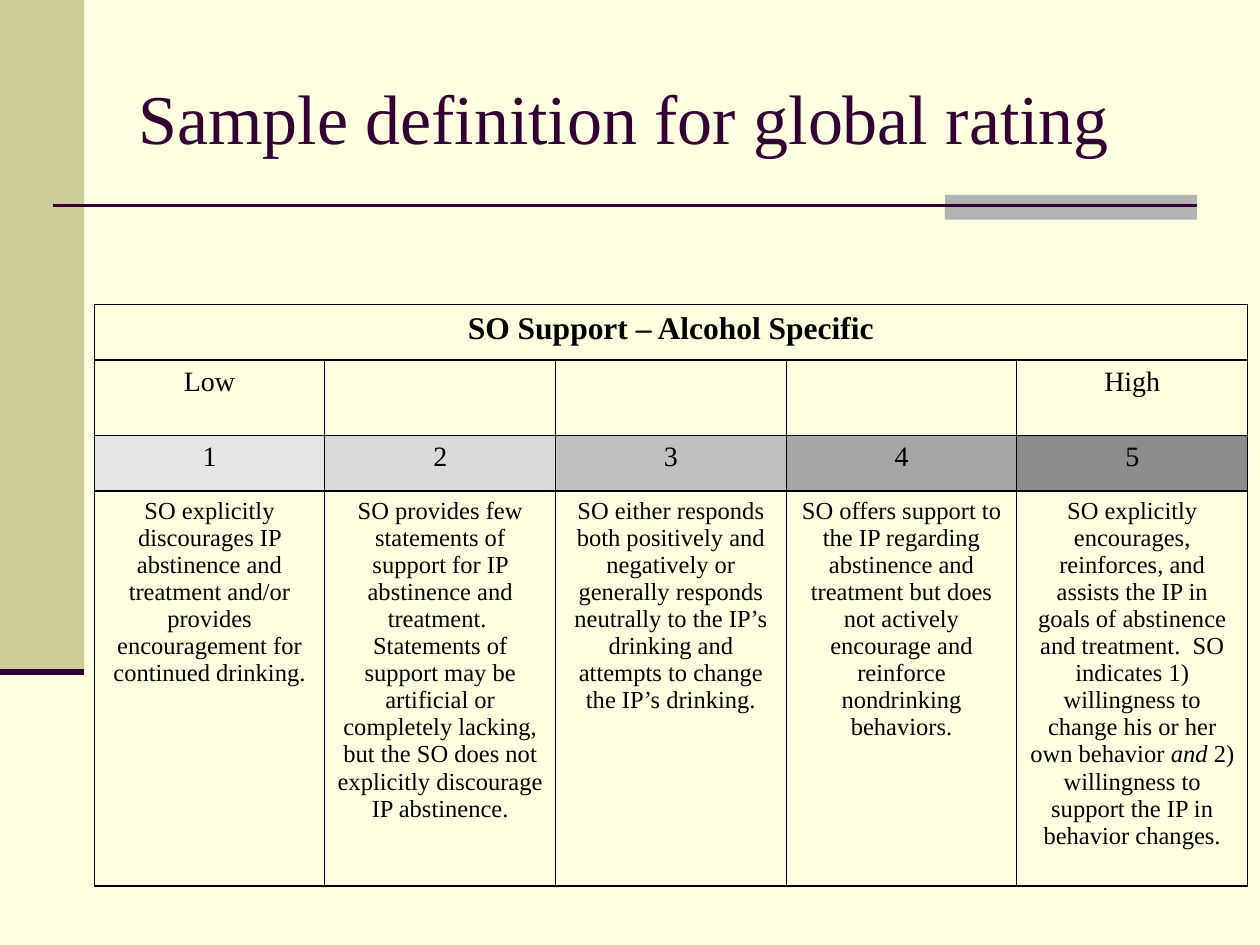
"""Build the slide defining a global rating scale for SO support."""
from dataclasses import dataclass

from lxml import etree
from pptx import Presentation
from pptx import util as u
from pptx.dml.color import RGBColor
from pptx.enum import shapes, text
from pptx.oxml.ns import qn

FONT = "Times New Roman"
PLUM, BLACK, CREAM = "330033", "000000", "FFFFE1"


@dataclass(frozen=True)
class Band:
    left: float
    top: float
    width: float
    height: float
    color: str


@dataclass(frozen=True)
class Rule:
    left: float
    right: float
    top: float
    weight: float


@dataclass(frozen=True)
class Level:
    label: str
    shade: str
    definition: tuple[str, ...]


BANDS = [
    Band(0, 0, 1.7, 13.55, "CCCC99"),
    Band(19.05, 3.93, 5.08, 0.5, "B2B2B2"),
]
RULES = [Rule(1.06, 24.13, 4.14, 1.5), Rule(0, 1.7, 13.55, 3.5)]
LEVELS = [
    Level("Low", "E6E6E6", (
        "SO explicitly discourages IP abstinence and treatment and/or provides "
        "encouragement for continued drinking.",)),
    Level("", "D9D9D9", (
        "SO provides few statements of support for IP abstinence and treatment.  "
        "Statements of support may be artificial or completely lacking, but the SO "
        "does not explicitly discourage IP abstinence.",)),
    Level("", "C0C0C0", (
        "SO either responds both positively and negatively or generally responds "
        "neutrally to the IP’s drinking and attempts to change the IP’s drinking.",)),
    Level("", "A6A6A6", (
        "SO offers support to the IP regarding abstinence and treatment but does not "
        "actively encourage and reinforce nondrinking behaviors.",)),
    Level("High", "8C8C8C", (
        "SO explicitly encourages, reinforces, and assists the IP in goals of "
        "abstinence and treatment.  SO indicates 1) willingness to change his or her "
        "own behavior", " and", " 2) willingness to support the IP in behavior changes.")),
]
ROW_HEIGHTS = [1.12, 1.52, 1.12, 7.36]
COLUMN_WIDTH = 4.65


def rgb(color: str) -> RGBColor:
    return RGBColor.from_string(color)


def style_run(run, size: float, color: str, bold: bool = False, italic: bool = False) -> None:
    run.font.name, run.font.size = FONT, u.Pt(size)
    run.font.bold, run.font.italic = bold, italic
    run.font.color.rgb = rgb(color)


def draw_band(slide, band: Band) -> None:
    bar = slide.shapes.add_shape(
        shapes.MSO_SHAPE.RECTANGLE,
        u.Cm(band.left), u.Cm(band.top), u.Cm(band.width), u.Cm(band.height))
    bar.shadow.inherit = False
    bar.fill.solid()
    bar.fill.fore_color.rgb = rgb(band.color)
    bar.line.fill.background()


def draw_rule(slide, rule: Rule) -> None:
    stroke = slide.shapes.add_connector(
        shapes.MSO_CONNECTOR.STRAIGHT,
        u.Cm(rule.left), u.Cm(rule.top), u.Cm(rule.right), u.Cm(rule.top))
    stroke.line.color.rgb = rgb(PLUM)
    stroke.line.width = u.Pt(rule.weight)
    etree.SubElement(stroke._element.spPr, qn("a:effectLst"))


def draw_title(slide, wording: str) -> None:
    title = slide.shapes.add_textbox(u.Cm(2.54), u.Cm(0.76), u.Cm(21.59), u.Cm(3.18))
    frame = title.text_frame
    frame.word_wrap = True
    frame.vertical_anchor = text.MSO_ANCHOR.MIDDLE
    frame.text = wording
    style_run(frame.paragraphs[0].runs[0], 40, PLUM)


def border_cell(cell, weights: dict[str, float]) -> None:
    properties = cell._tc.get_or_add_tcPr()
    for side in ("L", "R", "T", "B"):
        edge = etree.SubElement(properties, qn(f"a:ln{side}"), w=str(u.Pt(weights.get(side, 1))))
        fill = etree.SubElement(edge, qn("a:solidFill"))
        etree.SubElement(fill, qn("a:srgbClr"), val=BLACK)


def write_cell(cell, parts: tuple[str, ...], size: float, bold: bool = False) -> None:
    paragraph = cell.text_frame.paragraphs[0]
    paragraph.alignment = text.PP_ALIGN.CENTER
    for index, part in enumerate(parts):
        run = paragraph.add_run()
        run.text = part
        style_run(run, size, BLACK, bold, italic=index == 1)


def draw_scale(slide, heading: str, levels: list[Level]) -> None:
    last = len(levels) - 1
    scale = slide.shapes.add_table(
        len(ROW_HEIGHTS), len(levels), u.Cm(1.9), u.Cm(6.14),
        u.Cm(COLUMN_WIDTH * len(levels)), u.Cm(sum(ROW_HEIGHTS))).table
    scale.first_row = scale.horz_banding = False
    for row, height in zip(scale.rows, ROW_HEIGHTS):
        row.height = u.Cm(height)
        for position, cell in enumerate(row.cells):
            border_cell(cell, {"L": 0.75 if position else 1,
                               "R": 0.75 if position < last else 1})
            cell.fill.background()
    scale.cell(0, 0).merge(scale.cell(0, last))
    write_cell(scale.cell(0, 0), (heading,), 18, bold=True)
    for position, level in enumerate(levels):
        scale.columns[position].width = u.Cm(COLUMN_WIDTH)
        if level.label:
            write_cell(scale.cell(1, position), (level.label,), 16)
        score = scale.cell(2, position)
        score.fill.solid()
        score.fill.fore_color.rgb = rgb(level.shade)
        write_cell(score, (str(position + 1),), 16)
        write_cell(scale.cell(3, position), level.definition, 14)


def main() -> None:
    deck = Presentation()
    deck.slide_width, deck.slide_height = u.Cm(25.4), u.Cm(19.05)
    slide = deck.slides.add_slide(deck.slide_layouts[6])
    slide.background.fill.solid()
    slide.background.fill.fore_color.rgb = rgb(CREAM)
    for band in BANDS:
        draw_band(slide, band)
    for rule in RULES:
        draw_rule(slide, rule)
    draw_title(slide, "Sample definition for global rating")
    draw_scale(slide, "SO Support – Alcohol Specific", LEVELS)
    deck.save("out.pptx")


if __name__ == "__main__":
    main()
